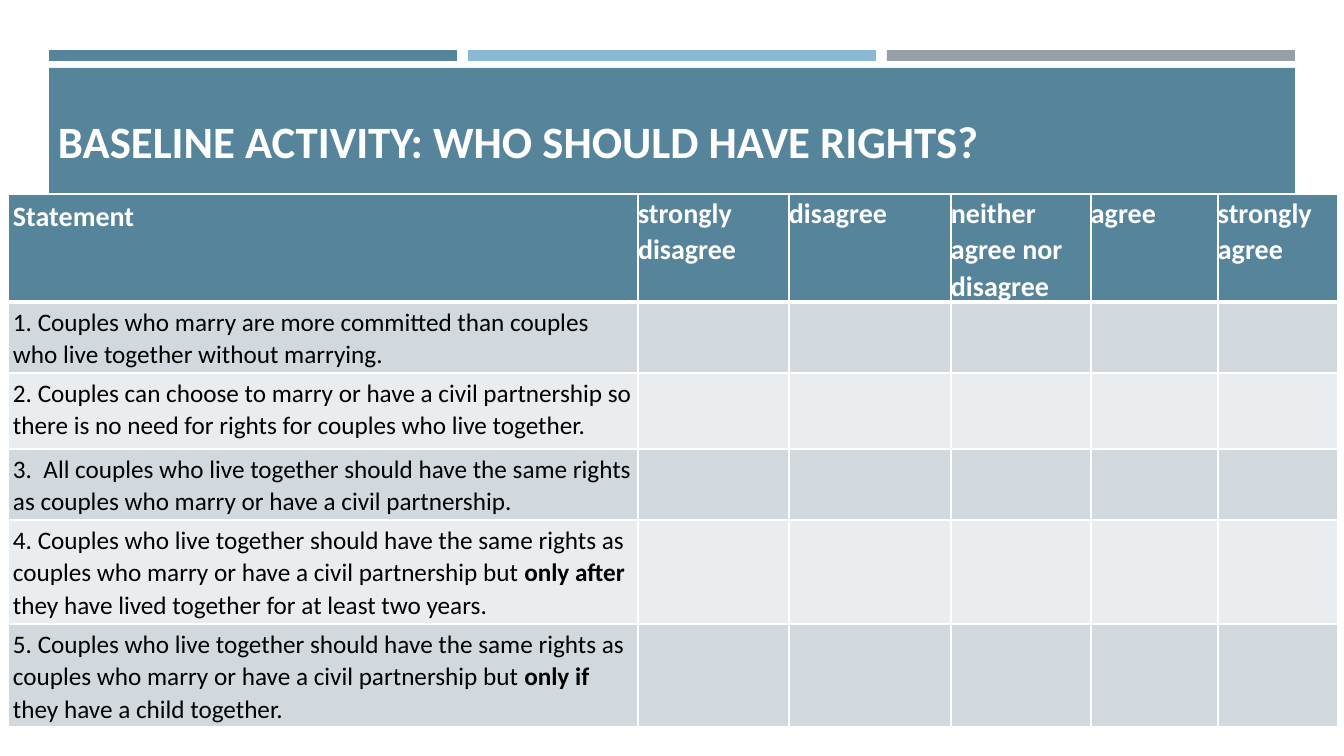
import pptx
import pptx.util
import pptx.dml.color
import pptx.enum.shapes
import pptx.enum.text
import pptx.oxml.ns
from lxml import etree

TITLE = "BASELINE ACTIVITY: WHO SHOULD HAVE RIGHTS?"
HEADERS = ["Statement", "strongly disagree", "disagree",
           "neither agree nor disagree", "agree", "strongly agree"]
SAME_RIGHTS = ("Couples who live together should have the same rights as "
               "couples who marry or have a civil partnership but ")
STATEMENTS = [
    ["1. Couples who marry are more committed than couples who live together without marrying."],
    ["2. Couples can choose to marry or have a civil partnership so there is no need "
     "for rights for couples who live together."],
    ["3.  All couples who live together should have the same rights as couples who "
     "marry or have a civil partnership."],
    ["4. " + SAME_RIGHTS, "only after", " they have lived together for at least two years."],
    ["5. " + SAME_RIGHTS, "only if", " they have a child together."],
]
COLS = [630, 151, 162, 140, 127, 120]
ROWS = [108, 71, 76, 71, 104, 96]
TABLE_LEFT, TABLE_TOP = 8, 194
BAND_LEFT, BAND_TOP, BAND_W, BAND_H, BAND_GAP = 49, 50, 408, 11, 11
PANEL = (49, 68, 1246, 131)
TITLE_BOX = (48, 13, 1226, 159)

THEME = {
    "font": "Calibri", "title": 32, "header": 20, "body": 18,
    "teal": "56859B", "sky": "89B9D3", "grey": "969FA7",
    "odd": "D1D9DE", "even": "E9EDEF", "white": "FFFFFF", "black": "000000",
}


def px(n):
    return pptx.util.Emu(round(n * 914400 / 100.8))


def rgb(name):
    return pptx.dml.color.RGBColor.from_string(THEME[name])


def style_run(r, size, color, bold):
    r.font.name = THEME["font"]
    r.font.size = pptx.util.Pt(THEME[size])
    r.font.color.rgb = rgb(color)
    r.font.bold = bold


def add_rect(s, box, color):
    sp = s.shapes.add_shape(pptx.enum.shapes.MSO_SHAPE.RECTANGLE, *map(px, box))
    sp.shadow.inherit = False
    sp.fill.solid()
    sp.fill.fore_color.rgb = rgb(color)
    sp.line.fill.background()


def set_borders(cell, top, bottom):
    qn = pptx.oxml.ns.qn
    tcPr = cell._tc.get_or_add_tcPr()
    for side, width in (("L", 1), ("R", 1), ("T", top), ("B", bottom)):
        ln = etree.SubElement(tcPr, qn("a:ln" + side), w=str(pptx.util.Pt(width)))
        fill = etree.SubElement(ln, qn("a:solidFill"))
        etree.SubElement(fill, qn("a:srgbClr"), val=THEME["white"])


def fill_cell(cell, parts, row, col):
    header = row == 0
    set_borders(cell, 3 if row == 1 else 1, 3 if header else 1)
    cell.fill.solid()
    cell.fill.fore_color.rgb = rgb("teal" if header else "odd" if row % 2 else "even")
    if not header and col:
        return
    cell.margin_left = cell.margin_right = px(0 if col else 5)
    cell.margin_top = cell.margin_bottom = px(0 if col else 3)
    p = cell.text_frame.paragraphs[0]
    p.line_spacing = 1.07
    p.space_after = pptx.util.Pt(8 if header else 0)
    for i, text in enumerate(parts):
        r = p.add_run()
        r.text = text
        style_run(r, "header" if header else "body",
                  "white" if header else "black", header or i == 1)


def add_table(s):
    frame = s.shapes.add_table(len(ROWS), len(COLS), px(TABLE_LEFT), px(TABLE_TOP),
                               px(sum(COLS)), px(sum(ROWS)))
    table = frame.table
    for column, width in zip(table.columns, COLS):
        column.width = px(width)
    for row, height in zip(table.rows, ROWS):
        row.height = px(height)
    content = [[[h] for h in HEADERS]]
    content += [[parts] + [[]] * (len(COLS) - 1) for parts in STATEMENTS]
    for row, cells in enumerate(content):
        for col, parts in enumerate(cells):
            fill_cell(table.cell(row, col), parts, row, col)


def add_title(s):
    tf = s.shapes.add_textbox(*map(px, TITLE_BOX)).text_frame
    tf.word_wrap = True
    tf.vertical_anchor = pptx.enum.text.MSO_ANCHOR.BOTTOM
    tf.text = TITLE
    style_run(tf.paragraphs[0].runs[0], "title", "white", True)


def main():
    prs = pptx.Presentation()
    prs.slide_width, prs.slide_height = px(1344), px(756)
    s = prs.slides.add_slide(prs.slide_layouts[6])
    for i, color in enumerate(("teal", "sky", "grey")):
        add_rect(s, (BAND_LEFT + i * (BAND_W + BAND_GAP), BAND_TOP, BAND_W, BAND_H), color)
    add_rect(s, PANEL, "teal")
    add_title(s)
    add_table(s)
    prs.save("out.pptx")


if __name__ == "__main__":
    main()
